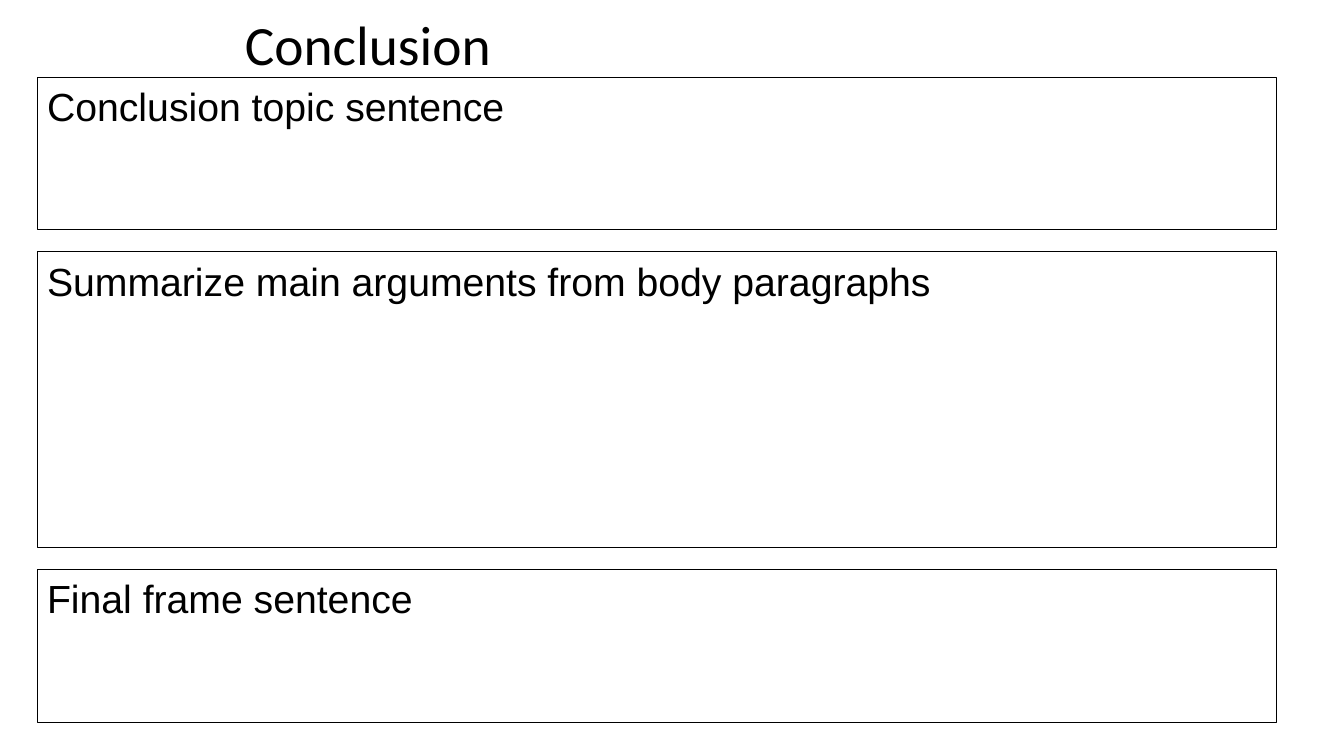
from pptx import Presentation
from pptx.dml.color import RGBColor
from pptx.enum.shapes import MSO_SHAPE as Shape
from pptx.enum.text import MSO_ANCHOR as Anchor, PP_ALIGN as Align
from pptx.util import Pt

BLACK = "000000"
PROMPTS = [
    ("Conclusion topic sentence", 108.8),
    ("Summarize main arguments from body paragraphs", 211),
    ("Final frame sentence", 109.4),
]


def color(hex_value):
    return RGBColor.from_string(hex_value)


def write(frame, text, *, font, size, anchor=Anchor.TOP, spacing=1.0):
    frame.word_wrap = True
    frame.vertical_anchor = anchor
    paragraph = frame.paragraphs[0]
    paragraph.alignment = Align.LEFT
    paragraph.line_spacing = spacing
    run = paragraph.add_run()
    run.text = text
    run.font.name = font
    run.font.size = Pt(size)
    run.font.color.rgb = color(BLACK)


def add_title(slide, text, left, top, width, height):
    title = slide.shapes.add_textbox(Pt(left), Pt(top), Pt(width), Pt(height))
    write(title.text_frame, text, font="Calibri", size=39.6,
          anchor=Anchor.MIDDLE, spacing=0.9)


def add_prompts(slide, prompts, left, top, width, gap):
    for prompt, height in prompts:
        answer_box = slide.shapes.add_shape(
            Shape.RECTANGLE, Pt(left), Pt(top), Pt(width), Pt(height))
        answer_box.shadow.inherit = False
        answer_box.fill.background()
        answer_box.line.color.rgb = color(BLACK)
        answer_box.line.width = Pt(0.75)
        write(answer_box.text_frame, prompt, font="Arial", size=28)
        top += height + gap


def main():
    deck = Presentation()
    deck.slide_width, deck.slide_height = Pt(960), Pt(540)
    slide = deck.slides.add_slide(deck.slide_layouts[6])
    add_title(slide, "Conclusion", 167.8, 12.2, 620.6, 43.2)
    add_prompts(slide, PROMPTS, left=26.6, top=55.4, width=885.6, gap=15.8)
    deck.save("out.pptx")


if __name__ == "__main__":
    main()
